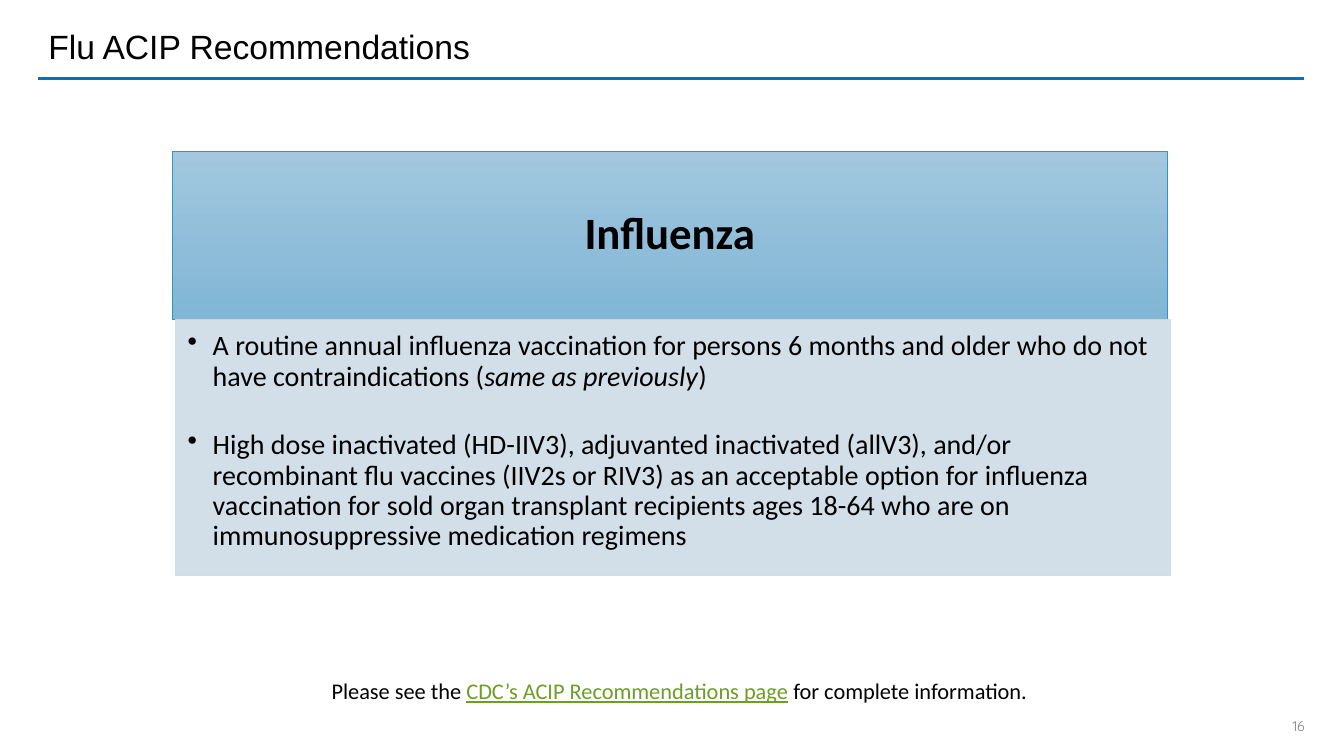
"""Build the flu recommendations slide."""
from dataclasses import dataclass
from typing import Optional

from lxml import etree
from pptx import Presentation
from pptx.dml.color import RGBColor
from pptx.enum.shapes import MSO_CONNECTOR, MSO_SHAPE
from pptx.enum.text import MSO_ANCHOR, MSO_AUTO_SIZE, PP_ALIGN
from pptx.oxml.ns import qn
from pptx.util import Inches, Pt

RECTANGLE = MSO_SHAPE.RECTANGLE
STRAIGHT = MSO_CONNECTOR.STRAIGHT
TOP, MIDDLE = MSO_ANCHOR.TOP, MSO_ANCHOR.MIDDLE
LEFT, CENTER = PP_ALIGN.LEFT, PP_ALIGN.CENTER
NO_AUTOFIT = MSO_AUTO_SIZE.NONE
TITLE_ONLY_LAYOUT = 5
BLACK = "000000"
PANEL_COLOR = "CEDCE7"
PANEL_ALPHA = 90


@dataclass(frozen=True)
class TextRun:
    """A stretch of text with its own emphasis."""
    text: str
    italic: bool = False
    bold: bool = False
    underline: bool = False
    color: str = BLACK


@dataclass(frozen=True)
class TextLine:
    """A paragraph made of runs."""
    runs: tuple[TextRun, ...]
    bullet: bool = False
    space_after: float = 0


@dataclass(frozen=True)
class TextStyle:
    """The look shared by all paragraphs of a box."""
    size: float
    font: str = "Calibri"
    alignment: PP_ALIGN = LEFT
    anchor: MSO_ANCHOR = TOP
    line_spacing: float = 1.0
    insets: tuple[float, float, float, float] = (0.1, 0.05, 0.1, 0.05)


@dataclass(frozen=True)
class Box:
    """A position and size in inches."""
    left: float
    top: float
    width: float
    height: float

    def lengths(self) -> tuple:
        """Return left, top, width and height as lengths."""
        return tuple(Inches(value) for value in (self.left, self.top, self.width, self.height))


TITLE = (TextLine((TextRun("Flu ACIP Recommendations"),)),)
HEADING = (TextLine((TextRun("Influenza", bold=True),)),)
RECOMMENDATIONS = (
    TextLine((
        TextRun("A routine annual influenza vaccination for persons 6 months and older "
                "who do not have contraindications ("),
        TextRun("same as previously", italic=True),
        TextRun(")"),
    ), bullet=True, space_after=27.5),
    TextLine((
        TextRun("High dose inactivated (HD-IIV3), adjuvanted inactivated (allV3), and/or "
                "recombinant flu vaccines (IIV2s or RIV3) as an acceptable option for "
                "influenza vaccination for sold organ transplant recipients ages 18-64 "
                "who are on immunosuppressive medication regimens"),
    ), bullet=True),
)
REFERENCE = (TextLine((
    TextRun("Please see the "),
    TextRun("CDC’s ACIP Recommendations page", underline=True, color="6B9F25"),
    TextRun(" for complete information."),
)),)
PAGE_NUMBER = (TextLine((TextRun("16", color="808080"),)),)


def rgb(color: str) -> RGBColor:
    """Turn a hex string into a colour."""
    return RGBColor.from_string(color)


def add_bullet(paragraph) -> None:
    """Give a paragraph a round bullet with a hanging indent."""
    properties = paragraph._p.get_or_add_pPr()
    properties.set("marL", str(Inches(0.25)))
    properties.set("indent", str(Inches(-0.25)))
    etree.SubElement(properties, qn("a:buChar")).set("char", "•")


def write_text(shape, lines: tuple[TextLine, ...], style: TextStyle) -> None:
    """Fill a shape with formatted paragraphs."""
    frame = shape.text_frame
    frame.word_wrap = True
    frame.auto_size = NO_AUTOFIT
    frame.vertical_anchor = style.anchor
    (frame.margin_left, frame.margin_top,
     frame.margin_right, frame.margin_bottom) = (Inches(inset) for inset in style.insets)
    for index, line in enumerate(lines):
        paragraph = frame.add_paragraph() if index else frame.paragraphs[0]
        if line.bullet:
            add_bullet(paragraph)
        paragraph.alignment = style.alignment
        paragraph.line_spacing = style.line_spacing
        paragraph.space_after = Pt(line.space_after)
        for text_run in line.runs:
            run = paragraph.add_run()
            run.text = text_run.text
            run.font.name = style.font
            run.font.size = Pt(style.size)
            run.font.bold = text_run.bold
            run.font.italic = text_run.italic
            run.font.underline = text_run.underline
            run.font.color.rgb = rgb(text_run.color)


def add_text(slide, box: Box, lines: tuple[TextLine, ...], style: TextStyle) -> None:
    """Add a text box."""
    write_text(slide.shapes.add_textbox(*box.lengths()), lines, style)


def add_panel(slide, box: Box, line_color: str, lines: tuple[TextLine, ...],
              style: TextStyle, fill: Optional[str] = None):
    """Add a thinly outlined rectangle with text."""
    shape = slide.shapes.add_shape(RECTANGLE, *box.lengths())
    shape.shadow.inherit = False
    shape.line.color.rgb = rgb(line_color)
    shape.line.width = Pt(0.5)
    if fill:
        shape.fill.solid()
        shape.fill.fore_color.rgb = rgb(fill)
    write_text(shape, lines, style)
    return shape


def shade_downwards(shape, top_color: str, bottom_color: str) -> None:
    """Fill a shape with a vertical gradient."""
    shape.fill.gradient()
    shape.fill.gradient_angle = 270
    for stop, color in zip(shape.fill.gradient_stops, (top_color, bottom_color)):
        stop.color.rgb = rgb(color)


def set_opacity(shape, percent: int) -> None:
    """Make the fill and outline of a shape partly transparent."""
    for color in shape._element.spPr.iter(qn("a:srgbClr")):
        etree.SubElement(color, qn("a:alpha")).set("val", str(percent * 1000))


def add_rule(slide, left: float, right: float, top: float) -> None:
    """Draw the blue line below the title."""
    rule = slide.shapes.add_connector(
        STRAIGHT, Inches(left), Inches(top), Inches(right), Inches(top))
    rule.line.color.rgb = rgb("0070C0")
    rule.line.width = Pt(2.25)
    etree.SubElement(rule._element.spPr, qn("a:effectLst"))


def main() -> None:
    """Build and save the slide."""
    presentation = Presentation()
    presentation.slide_width, presentation.slide_height = Inches(13.33), Inches(7.5)
    slide = presentation.slides.add_slide(presentation.slide_layouts[TITLE_ONLY_LAYOUT])

    title = slide.shapes.title
    title.left, title.top, title.width, title.height = Box(0.38, 0.16, 12.57, 0.65).lengths()
    write_text(title, TITLE, TextStyle(24, "Arial", anchor=MIDDLE, line_spacing=0.9))
    add_rule(slide, 0.38, 12.93, 0.78)

    heading = add_panel(
        slide, Box(1.71, 1.5, 9.87, 1.67), "3494BA", HEADING,
        TextStyle(32, alignment=CENTER, anchor=MIDDLE, line_spacing=0.9,
                  insets=(0.16, 0.09, 0.16, 0.09)))
    shade_downwards(heading, "A2C7DF", "81B6D5")

    recommendations = add_panel(
        slide, Box(1.74, 3.17, 9.87, 2.54), PANEL_COLOR, RECOMMENDATIONS,
        TextStyle(20, line_spacing=0.9, insets=(0.12, 0.12, 0.16, 0.17)), PANEL_COLOR)
    set_opacity(recommendations, PANEL_ALPHA)

    add_text(slide, Box(3.19, 6.67, 7.7, 0.37), REFERENCE, TextStyle(16))
    add_text(slide, Box(12.65, 7.12, 0.46, 0.17), PAGE_NUMBER,
             TextStyle(10, "Quicksand", CENTER, MIDDLE, insets=(0, 0, 0, 0)))
    presentation.save("out.pptx")


if __name__ == "__main__":
    main()
